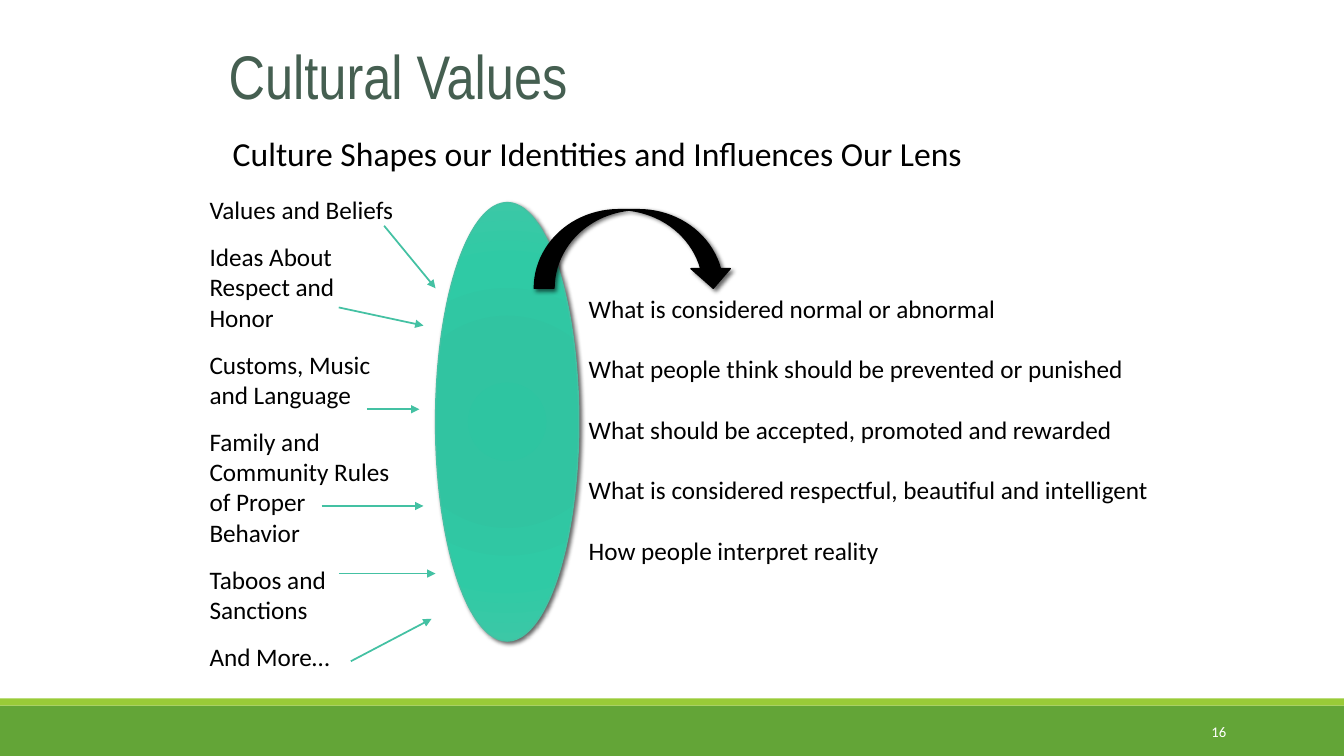
import pptx
import pptx.util
import pptx.dml.color
import pptx.enum.shapes
import pptx.enum.text
import pptx.oxml
import pptx.oxml.ns
from pptx.util import Inches

SHAPE = pptx.enum.shapes.MSO_SHAPE
ALIGN = pptx.enum.text.PP_ALIGN
ANCHOR = pptx.enum.text.MSO_ANCHOR
NS = pptx.oxml.ns.nsdecls("a")
TEAL = "44C1A3"

INPUTS = [
    "Values and Beliefs",
    "Ideas About Respect and Honor",
    "Customs, Music and Language",
    "Family and Community Rules of Proper Behavior",
    "Taboos and Sanctions",
    "And More…",
]
EFFECTS = [
    "What is considered normal or abnormal",
    "What people think should be prevented or punished",
    "What should be accepted, promoted and rewarded",
    "What is considered respectful, beautiful and intelligent",
    "How people interpret reality",
]
# Start and end of each arrow into the lens
ARROWS = [
    (3.81, 2.24, 4.32, 2.86),
    (3.36, 3.05, 4.2, 3.23),
    (3.64, 4.06, 4.16, 4.06),
    (3.19, 5.02, 4.2, 5.02),
    (3.36, 5.69, 4.32, 5.69),
    (3.48, 6.56, 4.28, 6.14),
]
LENS = [(0, "2EC5A1"), (34, "31C4A1"), (70, "2FCAA5"), (100, "3EC7A6")]


def color(code):
    return pptx.dml.color.RGBColor.from_string(code)


def add_xml(props, xml):
    props.append(pptx.oxml.parse_xml(xml))


def add_text(slide, box, lines, size, code="000000", font="Calibri",
             gap=0, align=ALIGN.LEFT, anchor=ANCHOR.TOP, wrap=True):
    frame = slide.shapes.add_textbox(*map(Inches, box)).text_frame
    frame.word_wrap = wrap
    frame.vertical_anchor = anchor
    for i, line in enumerate(lines):
        para = frame.paragraphs[0] if i == 0 else frame.add_paragraph()
        para.alignment = align
        if i:
            para.space_before = pptx.util.Pt(gap)
        run = para.add_run()
        run.text = line
        run.font.size = pptx.util.Pt(size)
        run.font.name = font
        run.font.color.rgb = color(code)


def add_shape(slide, kind, box, fill, line=None):
    shape = slide.shapes.add_shape(kind, *map(Inches, box))
    shape.shadow.inherit = False
    shape.fill.solid()
    shape.fill.fore_color.rgb = color(fill)
    if line:
        shape.line.color.rgb = color(line)
        shape.line.width = pptx.util.Pt(1)
    else:
        shape.line.fill.background()
    return shape


def add_shadow(shape):
    props = shape._element.spPr
    props.remove(props.find(pptx.oxml.ns.qn("a:effectLst")))
    add_xml(props, f'<a:effectLst {NS}><a:outerShdw blurRad="38100" dist="25400" '
                   'dir="2700000" algn="br" rotWithShape="0"><a:srgbClr val="000000">'
                   '<a:alpha val="60000"/></a:srgbClr></a:outerShdw></a:effectLst>')


def set_glow(shape, stops):
    """Fill the shape with a round gradient."""
    marks = "".join(f'<a:gs pos="{pos * 1000}"><a:srgbClr val="{code}"/></a:gs>'
                    for pos, code in stops)
    props = shape._element.spPr
    solid = props.find(pptx.oxml.ns.qn("a:solidFill"))
    props.replace(solid, pptx.oxml.parse_xml(
        f'<a:gradFill {NS} rotWithShape="1"><a:gsLst>{marks}</a:gsLst>'
        '<a:path path="circle"><a:fillToRect l="100000" t="100000" '
        'r="100000" b="100000"/></a:path></a:gradFill>'))


def add_arrow(slide, ends):
    arrow = slide.shapes.add_connector(
        pptx.enum.shapes.MSO_CONNECTOR.STRAIGHT, *map(Inches, ends))
    arrow.line.color.rgb = color(TEAL)
    arrow.line.width = pptx.util.Pt(1.25)
    add_xml(arrow.line._get_or_add_ln(), f'<a:tailEnd {NS} type="triangle"/>')
    add_xml(arrow._element.spPr, f'<a:effectLst {NS}/>')


def main():
    deck = pptx.Presentation()
    deck.slide_width, deck.slide_height = Inches(13.33), Inches(7.5)
    slide = deck.slides.add_slide(deck.slide_layouts[6])

    # Footer bands and page number
    add_shape(slide, SHAPE.RECTANGLE, (0, 7, 13.33, 0.5), "63A537")
    add_shape(slide, SHAPE.RECTANGLE, (0, 6.93, 13.33, 0.07), "99CB38")
    add_text(slide, (10.83, 7.06, 1.43, 0.4), ["16"], 10.5, "FFFFFF",
             align=ALIGN.RIGHT, anchor=ANCHOR.MIDDLE)

    # Title and subtitle
    add_text(slide, (2.17, 0.3, 9, 0.88), ["Cultural Values"], 44, "455F51",
             "Arial Narrow", anchor=ANCHOR.MIDDLE)
    add_text(slide, (2.21, 1.27, 7.51, 0.5),
             ["Culture Shapes our Identities and Influences Our Lens"], 24, wrap=False)

    # What the lens shapes
    add_text(slide, (5.74, 2.86, 5.82, 2.83), EFFECTS, 18, gap=21.6)

    # Lens
    lens = add_shape(slide, SHAPE.OVAL, (4.32, 2.01, 1.42, 4.35), TEAL, TEAL)
    set_glow(lens, LENS)
    add_shadow(lens)

    # What feeds the lens
    add_text(slide, (1.98, 1.88, 2.06, 4.88), INPUTS, 18, gap=12)
    for ends in ARROWS:
        add_arrow(slide, ends)

    # Bent arrow from the lens to its effects
    bend = add_shape(slide, SHAPE.CURVED_DOWN_ARROW, (5.3, 2.08, 1.97, 0.78),
                     "000000", "000000")
    add_shadow(bend)

    deck.save("out.pptx")


if __name__ == "__main__":
    main()
